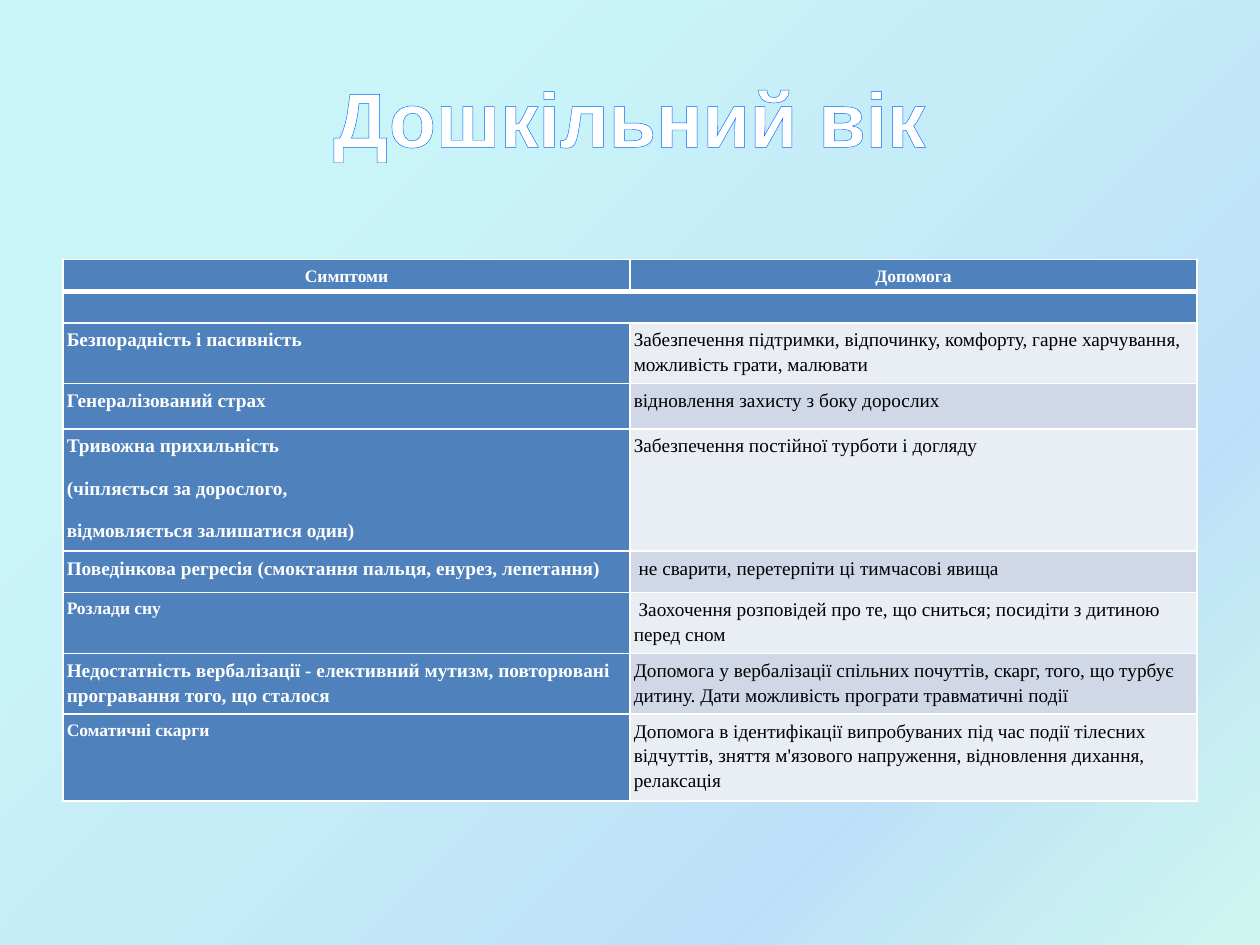
import pptx
import pptx.dml.color
import pptx.enum.shapes
import pptx.enum.text
import pptx.oxml
import pptx.oxml.ns
import pptx.util
from lxml import etree
from pptx.dml.color import RGBColor
from pptx.util import Inches

WHITE = RGBColor(0xFF, 0xFF, 0xFF)
BLACK = RGBColor(0x00, 0x00, 0x00)
BLUE = RGBColor(0x4F, 0x81, 0xBD)
PALE = RGBColor(0xE9, 0xED, 0xF4)
MID = RGBColor(0xD0, 0xD8, 0xE8)
OUTLINE = RGBColor(0x00, 0x66, 0xFF)

# Position %, colour, opacity %
BACKDROP_STOPS = [
    (25, RGBColor(0x21, 0xD6, 0xE0), 23),
    (75, RGBColor(0x00, 0x87, 0xE6), 25),
    (100, RGBColor(0x03, 0xD4, 0xA8), 18),
    (100, RGBColor(0x00, 0x5C, 0xBF), 26),
]

HEADINGS = ["Симптоми", "Допомога"]
# Row height, symptom, symptom size, help
SYMPTOMS = [
    (0.45, "Безпорадність і пасивність", 11,
     "Забезпечення підтримки, відпочинку, комфорту, гарне харчування, можливість грати, малювати"),
    (0.36, "Генералізований страх", 11, "відновлення захисту з боку дорослих"),
    (0.93, "Тривожна прихильність\n(чіпляється за дорослого,\nвідмовляється залишатися один)", 11,
     "Забезпечення постійної турботи і догляду"),
    (0.33, "Поведінкова регресія (смоктання пальця, енурез, лепетання)", 11,
     " не сварити, перетерпіти ці тимчасові явища"),
    (0.45, "Розлади сну", 10,
     " Заохочення розповідей про те, що сниться; посидіти з дитиною перед сном"),
    (0.45, "Недостатність вербалізації - елективний мутизм, повторювані програвання того, що сталося", 11,
     "Допомога у вербалізації спільних почуттів, скарг, того, що турбує дитину. "
     "Дати можливість програти травматичні події"),
    (0.66, "Соматичні скарги", 10,
     "Допомога в ідентифікації випробуваних під час події тілесних відчуттів, "
     "зняття м'язового напруження, відновлення дихання, релаксація"),
]
HEADER_HEIGHTS = [0.24, 0.25]


def line_xml(tag, color, points):
    return pptx.oxml.parse_xml(
        f'<a:{tag} {pptx.oxml.ns.nsdecls("a")} w="{int(pptx.util.Pt(points))}">'
        f'<a:solidFill><a:srgbClr val="{color}"/></a:solidFill></a:{tag}>')


def add_backdrop(slide, left, top, width, height):
    backdrop = slide.shapes.add_shape(
        pptx.enum.shapes.MSO_SHAPE.RECTANGLE, left, top, width, height)
    backdrop.shadow.inherit = False
    backdrop.line.fill.background()
    stops = "".join(
        f'<a:gs pos="{position * 1000}"><a:srgbClr val="{color}">'
        f'<a:alpha val="{opacity * 1000}"/></a:srgbClr></a:gs>'
        for position, color, opacity in BACKDROP_STOPS)
    gradient = pptx.oxml.parse_xml(
        f'<a:gradFill {pptx.oxml.ns.nsdecls("a")} rotWithShape="1"><a:gsLst>{stops}</a:gsLst>'
        '<a:lin ang="2700000" scaled="0"/></a:gradFill>')
    geometry = backdrop._element.spPr.find(pptx.oxml.ns.qn("a:prstGeom"))
    geometry.addnext(gradient)


def add_title(slide, left, top, width, height):
    frame = slide.shapes.add_textbox(left, top, width, height).text_frame
    frame.word_wrap = True
    frame.vertical_anchor = pptx.enum.text.MSO_ANCHOR.MIDDLE
    frame.text = "Дошкільний вік"
    paragraph = frame.paragraphs[0]
    paragraph.alignment = pptx.enum.text.PP_ALIGN.CENTER
    run = paragraph.runs[0]
    run.font.name = "Arial"
    run.font.size = pptx.util.Pt(44)
    run.font.bold = True
    run.font.color.rgb = WHITE
    run._r.get_or_add_rPr().insert(0, line_xml("ln", OUTLINE, 1.45))


def style_cell(cell, fill, bottom=1):
    cell.margin_left = cell.margin_right = Inches(0.03)
    cell.margin_top = cell.margin_bottom = Inches(0.03)
    properties = cell._tc.get_or_add_tcPr()
    for tag, points in (("lnL", 1), ("lnR", 1), ("lnT", 1), ("lnB", bottom)):
        properties.append(line_xml(tag, WHITE, points))
    cell.fill.solid()
    cell.fill.fore_color.rgb = fill


def write_cell(cell, text, size, color, bold):
    cell.text_frame.text = text
    paragraphs = cell.text_frame.paragraphs
    for paragraph in paragraphs:
        paragraph.line_spacing = 1.15
        font = paragraph.runs[0].font
        font.name = "Times New Roman"
        font.size = pptx.util.Pt(size)
        font.bold = bold
        font.color.rgb = color
    for paragraph in paragraphs[:-1]:
        paragraph.space_after = pptx.util.Pt(10)


def add_symptom_table(slide, left, top, width):
    heights = HEADER_HEIGHTS + [row[0] for row in SYMPTOMS]
    table = slide.shapes.add_table(
        len(heights), 2, left, top, width, Inches(sum(heights))).table
    table.first_row = table.horz_banding = False
    for row, height in zip(table.rows, heights):
        row.height = Inches(height)

    for column, heading in enumerate(HEADINGS):
        cell = table.cell(0, column)
        style_cell(cell, BLUE, bottom=3)
        write_cell(cell, heading, 10, WHITE, True)
        cell.vertical_anchor = pptx.enum.text.MSO_ANCHOR.MIDDLE
        cell.text_frame.paragraphs[0].alignment = pptx.enum.text.PP_ALIGN.CENTER

        spacer = table.cell(1, column)
        style_cell(spacer, BLUE)
        end = etree.SubElement(spacer.text_frame.paragraphs[0]._p,
                               pptx.oxml.ns.qn("a:endParaRPr"))
        end.set("sz", "1000")
    table.cell(1, 0).merge(table.cell(1, 1))

    for index, (_, symptom, size, support) in enumerate(SYMPTOMS):
        symptom_cell, support_cell = table.rows[index + 2].cells
        style_cell(symptom_cell, BLUE)
        write_cell(symptom_cell, symptom, size, WHITE, True)
        style_cell(support_cell, MID if index % 2 else PALE)
        write_cell(support_cell, support, 11, BLACK, False)


def main():
    presentation = pptx.Presentation()
    presentation.slide_width = Inches(10)
    presentation.slide_height = Inches(7.5)
    slide = presentation.slides.add_slide(presentation.slide_layouts[6])
    add_backdrop(slide, 0, 0, Inches(10), Inches(7.67))
    add_title(slide, Inches(0.5), Inches(0.3), Inches(9), Inches(1.25))
    add_symptom_table(slide, Inches(0.5), Inches(2.06), Inches(9))
    presentation.save("out.pptx")


if __name__ == "__main__":
    main()
